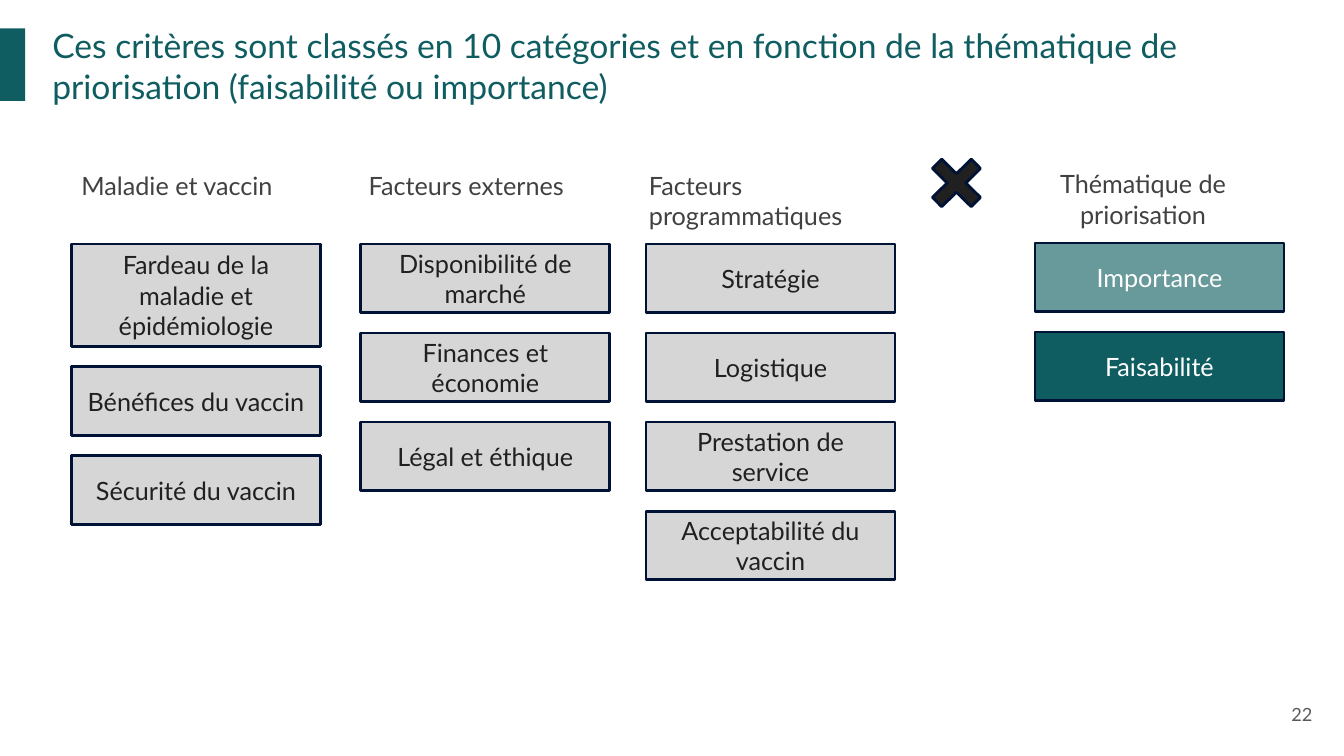
"""Build the slide that sorts ten criteria categories by prioritisation theme."""
import dataclasses

import pptx
import pptx.dml.color
import pptx.enum.shapes
import pptx.enum.text
import pptx.util

Pt = pptx.util.Pt
SHAPE = pptx.enum.shapes.MSO_SHAPE
ALIGN = pptx.enum.text.PP_ALIGN
ANCHOR = pptx.enum.text.MSO_ANCHOR


@dataclasses.dataclass(frozen=True)
class Theme:
    """Colours, font and type sizes of the slide."""
    font: str = "Lato"
    teal: str = "0F5D61"
    soft_teal: str = "68999B"
    grey: str = "D6D6D6"
    navy: str = "001235"
    ink: str = "202020"
    heading: str = "414141"
    muted: str = "595959"
    white: str = "FFFFFF"
    title_size: float = 24
    body_size: float = 18
    number_size: float = 13


class SlideBuilder:
    """Draws themed elements on one slide, with lengths in points."""

    box_width = 177.84
    box_height = 49
    box_gap = 14.6

    def __init__(self, slide, theme):
        """Keep the slide and its theme."""
        self.slide = slide
        self.theme = theme

    def set_text(self, frame, text, size, color, align, anchor):
        """Fill a text frame with one styled paragraph."""
        frame.word_wrap = True
        frame.vertical_anchor = anchor
        frame.text = text
        paragraph = frame.paragraphs[0]
        paragraph.alignment = align
        font = paragraph.runs[0].font
        font.name = self.theme.font
        font.size = Pt(size)
        font.color.rgb = pptx.dml.color.RGBColor.from_string(color)

    def label(self, text, area, size, color, align=ALIGN.LEFT, anchor=ANCHOR.TOP, inset=None):
        """Add free text in an area of left, top, width and height."""
        frame = self.slide.shapes.add_textbox(*map(Pt, area)).text_frame
        if inset is not None:
            frame.margin_left = frame.margin_right = Pt(inset)
            frame.margin_top = frame.margin_bottom = Pt(inset)
        self.set_text(frame, text, size, color, align, anchor)

    def shape(self, preset, area, fill, outlined=True):
        """Add a flat preset shape and return it."""
        shape = self.slide.shapes.add_shape(preset, *map(Pt, area))
        shape.shadow.inherit = False
        shape.fill.solid()
        shape.fill.fore_color.rgb = pptx.dml.color.RGBColor.from_string(fill)
        if outlined:
            shape.line.color.rgb = pptx.dml.color.RGBColor.from_string(self.theme.navy)
            shape.line.width = Pt(2)
        else:
            shape.line.fill.background()
        return shape

    def column(self, left, top, boxes):
        """Stack boxes given as text, fill, text colour and height."""
        for text, fill, color, height in boxes:
            box = self.shape(SHAPE.RECTANGLE, (left, top, self.box_width, height), fill)
            self.set_text(box.text_frame, text, self.theme.body_size, color,
                          ALIGN.CENTER, ANCHOR.MIDDLE)
            top += height + self.box_gap


def main():
    """Compose and save the slide."""
    deck = pptx.Presentation()
    deck.slide_width, deck.slide_height = Pt(960), Pt(540)
    theme = Theme()
    builder = SlideBuilder(deck.slides.add_slide(deck.slide_layouts[6]), theme)

    builder.shape(SHAPE.RECTANGLE, (-0.7, 20.2, 18.7, 51.8), theme.teal, outlined=False)
    builder.label("Ces critères sont classés en 10 catégories et en fonction de la "
                  "thématique de priorisation (faisabilité ou importance)",
                  (37.4, 18, 903.6, 57.6), theme.title_size, theme.teal, inset=0)

    criteria = [
        ("Maladie et vaccin", 51.1, 51.1, 29,
         {"Fardeau de la maladie et épidémiologie": 73,
          "Bénéfices du vaccin": builder.box_height,
          "Sécurité du vaccin": builder.box_height}),
        ("Facteurs externes", 256.3, 257.8, 29,
         dict.fromkeys(["Disponibilité de marché", "Finances et économie",
                        "Légal et éthique"], builder.box_height)),
        ("Facteurs programmatiques", 456.5, 461.5, 51,
         dict.fromkeys(["Stratégie", "Logistique", "Prestation de service",
                        "Acceptabilité du vaccin"], builder.box_height)),
    ]
    for heading, heading_left, boxes_left, heading_height, categories in criteria:
        builder.label(heading, (heading_left, 118.1, 188, heading_height),
                      theme.body_size, theme.heading)
        builder.column(boxes_left, 174.3, [(category, theme.grey, theme.ink, height)
                                           for category, height in categories.items()])

    cross = builder.shape(SHAPE.MATH_MULTIPLY, (656.6, 104.4, 53.3, 52.6), theme.ink)
    cross.adjustments[0] = 0.178

    builder.label("Thématique de priorisation", (716.4, 116.9, 200.2, 51),
                  theme.body_size, theme.heading, ALIGN.CENTER)
    builder.column(739.3, 173.6, [
        ("Importance", theme.soft_teal, theme.white, builder.box_height),
        ("Faisabilité", theme.teal, theme.white, builder.box_height),
    ])
    builder.label("22", (889.2, 489.6, 57.6, 41), theme.number_size, theme.muted,
                  ALIGN.RIGHT, ANCHOR.MIDDLE, inset=9.4)
    deck.save("out.pptx")


if __name__ == "__main__":
    main()
